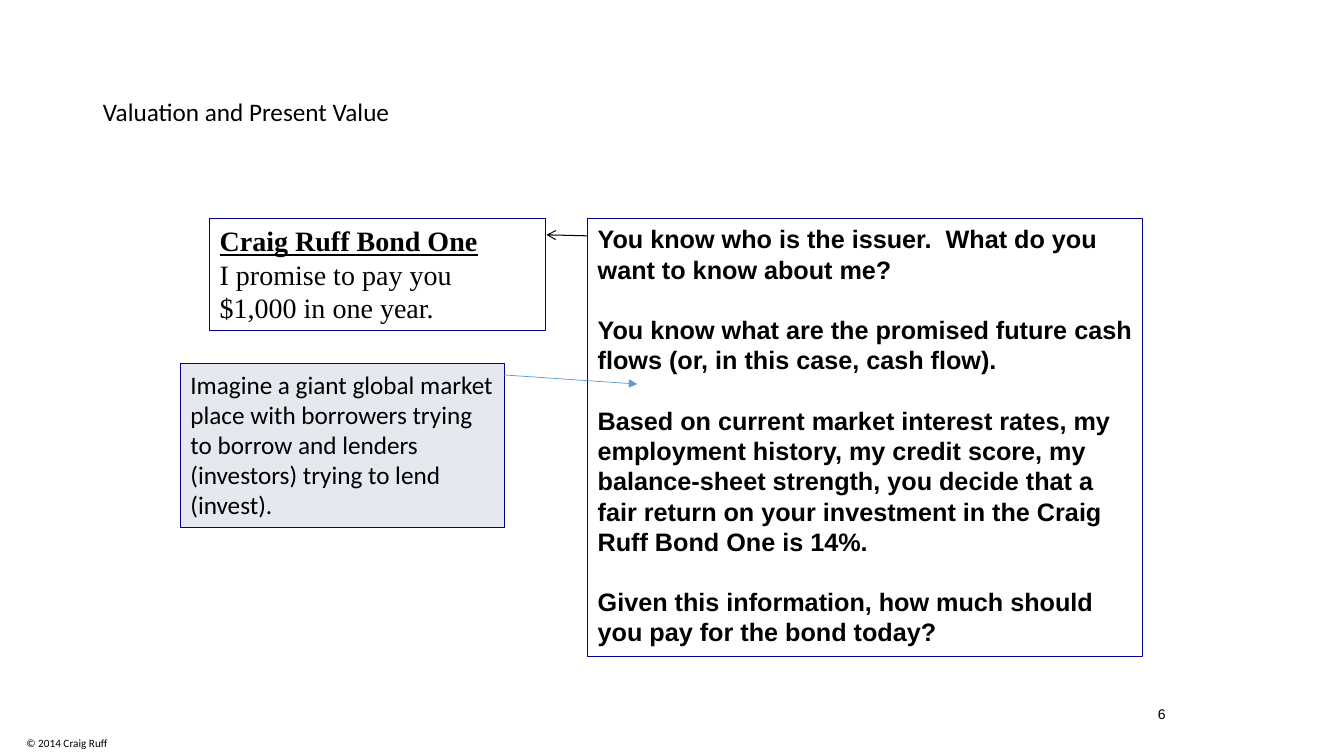
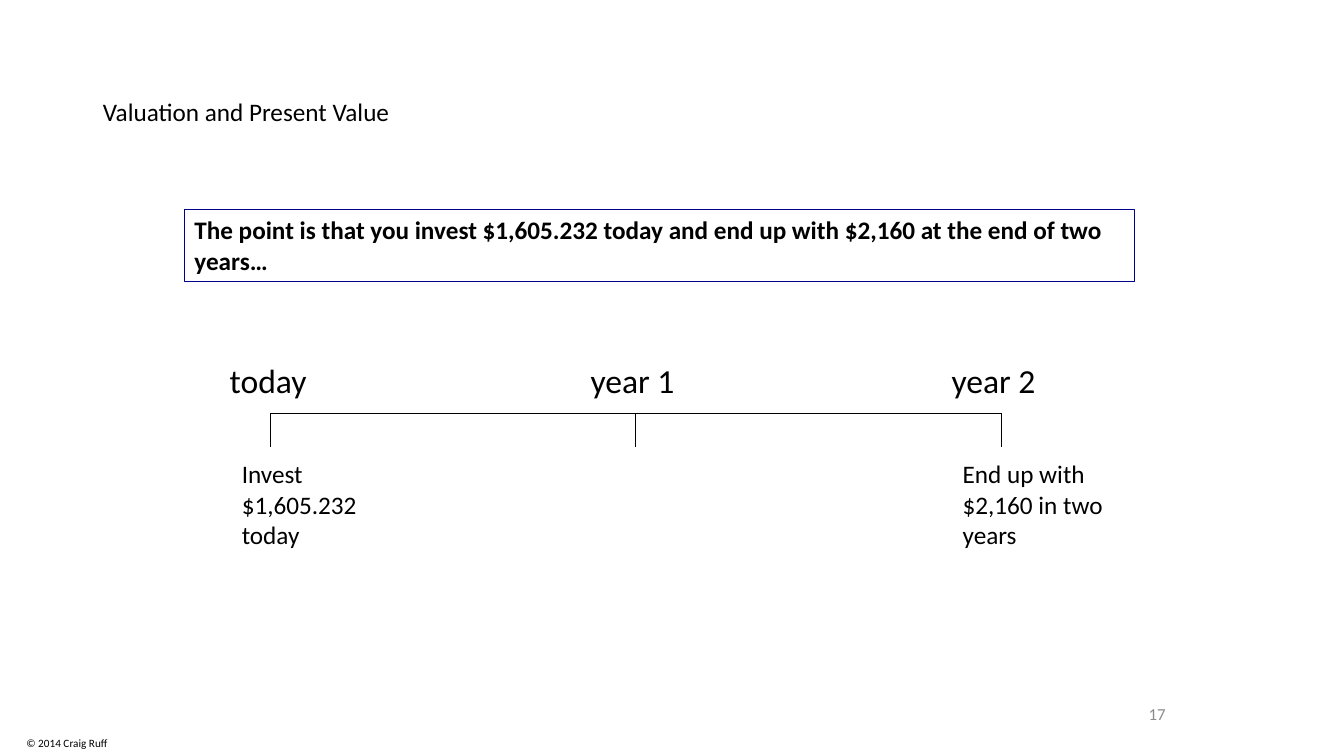
import pptx
import pptx.util
import pptx.dml.color
import pptx.enum.shapes
import pptx.enum.text
import pptx.oxml.ns
import lxml.etree

Inches = pptx.util.Inches
Pt = pptx.util.Pt
ALIGN = pptx.enum.text.PP_ALIGN
ANCHOR = pptx.enum.text.MSO_ANCHOR
COLORS = {"text": "000000", "border": "000090", "navy": "002060",
          "blue": "5B9BD5", "gray": "8C8C8C"}


def rgb(name):
    return pptx.dml.color.RGBColor.from_string(COLORS[name])


def sub(parent, tag, **attrs):
    return lxml.etree.SubElement(parent, pptx.oxml.ns.qn(tag), **attrs)


class Deck:
    font = "Calibri"
    size = 18

    def __init__(self):
        self.prs = pptx.Presentation()
        self.prs.slide_width = Inches(13.33)
        self.prs.slide_height = Inches(7.5)

    def slide(self, title, number, **number_style):
        self.s = self.prs.slides.add_slide(self.prs.slide_layouts[5])
        sp = self.s.shapes.title
        sp.left, sp.top, sp.width, sp.height = map(Inches, (0.92, 0.4, 11.5, 1.45))
        tf = sp.text_frame
        tf.vertical_anchor = ANCHOR.MIDDLE
        self.run(tf.paragraphs[0], title)
        tf.paragraphs[0].alignment = ALIGN.LEFT
        tf.paragraphs[0].line_spacing = 0.9
        self.text((9.58, 6.83, 2.08, 0.5), [number], align=ALIGN.RIGHT,
                  anchor=ANCHOR.MIDDLE, **number_style)
        self.text((0, 7.26, 1.33, 0.24), ["© 2014 Craig Ruff"], size=8,
                  align=ALIGN.CENTER)

    def run(self, p, text, font=None, size=None, color="text", bold=False,
            underline=False):
        r = p.add_run()
        r.text = text
        r.font.name = font or self.font
        r.font.size = Pt(size or self.size)
        r.font.color.rgb = rgb(color)
        r.font.bold = bold
        r.font.underline = underline

    def fill_text(self, sp, paragraphs, align=ALIGN.LEFT, anchor=ANCHOR.TOP,
                  gap=0, heading=None, **style):
        tf = sp.text_frame
        tf.word_wrap = True
        tf.vertical_anchor = anchor
        lines = [(text, style) for text in paragraphs]
        if heading:
            lines.insert(0, (heading, {**style, "bold": True, "underline": True}))
        for i, (text, line_style) in enumerate(lines):
            p = tf.add_paragraph() if i else tf.paragraphs[0]
            p.alignment = align
            p.space_before = Pt(gap if i else 0)
            self.run(p, text, **line_style)

    def text(self, box, paragraphs, **style):
        sp = self.s.shapes.add_textbox(*map(Inches, box))
        self.fill_text(sp, paragraphs, **style)

    def panel(self, box, paragraphs, fill=None, opacity=100, **style):
        sp = self.s.shapes.add_shape(
            pptx.enum.shapes.MSO_SHAPE.RECTANGLE, *map(Inches, box))
        sp.shadow.inherit = False
        sp.line.color.rgb = rgb("border")
        sp.line.width = Pt(0.75)
        if fill:
            sp.fill.solid()
            sp.fill.fore_color.rgb = rgb(fill)
            clr = sp.fill._xPr.find(".//" + pptx.oxml.ns.qn("a:srgbClr"))
            sub(clr, "a:alpha", val=str(opacity * 1000))
        else:
            sp.fill.background()
        self.fill_text(sp, paragraphs, **style)

    def line(self, start, end, color="text", width=0.75, head=None):
        c = self.s.shapes.add_connector(
            pptx.enum.shapes.MSO_CONNECTOR.STRAIGHT, *map(Inches, start + end))
        c.line.color.rgb = rgb(color)
        c.line.width = Pt(width)
        if head:
            sub(c.line._get_or_add_ln(), "a:tailEnd", type=head)
        sub(c._element.spPr, "a:effectLst")


def bond_slide(deck):
    deck.slide("Valuation and Present Value", "6", size=10, font="Arial")
    deck.panel((2.08, 2.17, 3.33, 1.11),
               ["I promise to pay you $1,000 in one year."],
               heading="Craig Ruff Bond One", font="Times New Roman", size=20)
    deck.panel((5.83, 2.17, 5.5, 4.34), [
        "You know who is the issuer.  What do you want to know about me?",
        "You know what are the promised future cash flows (or, in this case, cash flow).",
        "Based on current market interest rates, my employment history, my credit "
        "score, my balance-sheet strength, you decide that a fair return on your "
        "investment in the Craig Ruff Bond One is 14%.",
        "Given this information, how much should you pay for the bond today?",
    ], font="Arial", bold=True, gap=21.6)
    deck.line((5.83, 2.34), (5.42, 2.33), head="arrow")
    deck.panel((1.79, 3.61, 3.21, 1.62), [
        "Imagine a giant global market place with borrowers trying to borrow "
        "and lenders (investors) trying to lend (invest)."],
        fill="navy", opacity=10)
    deck.line((5, 3.72), (6.32, 3.81), color="blue", width=0.5, head="triangle")


def timeline_slide(deck):
    deck.slide("Valuation and Present Value", "17", size=12, color="gray")
    deck.panel((1.83, 2.08, 9.42, 0.71), [
        "The point is that you invest $1,605.232 today and end up with $2,160 "
        "at the end of two years…"], bold=True)
    left, right, top = 2.68, 9.93, 4.1
    step = (right - left) / 2
    deck.line((left, top), (right, top))
    for i, label in enumerate(["today", "year 1", "year 2"]):
        x = left + i * step
        deck.line((x, top), (x, top + 0.33))
        deck.text((2.18 + i * 3.58, 3.52, 1.34, 0.51), [label], size=24)
    for x, note in ((2.3, "Invest $1,605.232 today"),
                    (9.45, "End up with $2,160 in two years")):
        deck.text((x, 4.5, 1.67, 1.01), [note])


def main():
    deck = Deck()
    bond_slide(deck)
    timeline_slide(deck)
    deck.prs.save("out.pptx")


if __name__ == "__main__":
    main()
